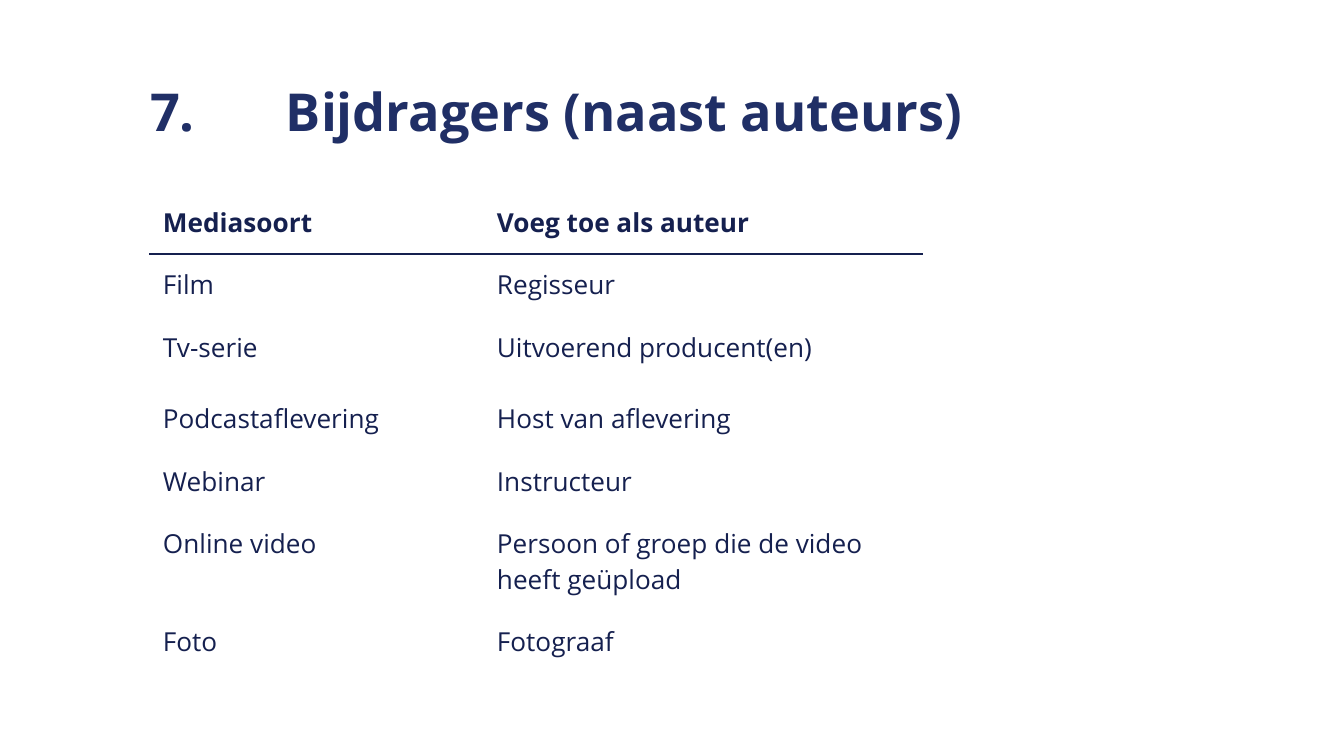
from dataclasses import dataclass

from lxml.etree import SubElement as Sub
from pptx import Presentation
from pptx.dml.color import RGBColor as Rgb
from pptx.enum.text import MSO_ANCHOR as Anchor
from pptx.oxml.ns import qn
from pptx.util import Emu, Pt

SCALE = 914400 / 134.4


@dataclass(frozen=True)
class Theme:
    """Hold the font, colours and type sizes."""
    font: str = "Open Sans"
    title: str = "202F66"
    ink: str = "15204F"
    big: int = 28
    body: int = 14
    rule: float = 1.5


THEME = Theme()
HEAD = ("Mediasoort", "Voeg toe als auteur")
ROWS = (
    ("Film", "Regisseur"),
    ("Tv-serie", "Uitvoerend producent(en)"),
    ("Podcastaflevering", "Host van aflevering"),
    ("Webinar", "Instructeur"),
    ("Online video", "Persoon of groep die de video heeft geüpload"),
    ("Foto", "Fotograaf"),
)
COLS = (334, 438)
HEIGHTS = (62, 63, 71, 63, 62, 98, 62)


def px(num):
    """Turn pixels into EMU."""
    return Emu(round(num * SCALE))


def pad(box):
    """Set the inner margins of a cell or text frame."""
    box.margin_left = box.margin_right = px(13)
    box.margin_top = box.margin_bottom = px(13)


def write(frame, text, size, color, bold):
    """Add one styled run to the first paragraph."""
    run = frame.paragraphs[0].add_run()
    run.text = text
    font = run.font
    font.name, font.size, font.bold = THEME.font, Pt(size), bold
    font.color.rgb = Rgb.from_string(color)


def add_title(slide, text):
    """Add the slide heading with a tab after its number."""
    frame = slide.shapes.add_textbox(*map(px, (137, 66, 1058, 85))).text_frame
    frame.word_wrap = True
    frame.vertical_anchor = Anchor.TOP
    pad(frame)
    props = frame.paragraphs[0]._p.get_or_add_pPr()
    tabs = Sub(props, qn("a:tabLst"))
    Sub(tabs, qn("a:tab"), pos=str(px(136)), algn="l")
    write(frame, text, THEME.big, THEME.title, True)


def add_rule(cell, side, shown):
    """Set one side of a cell to a solid border or to none."""
    props = cell._tc.get_or_add_tcPr()
    line = Sub(props, qn(f"a:{side}"), w=str(Pt(THEME.rule)))
    if shown:
        fill = Sub(line, qn("a:solidFill"))
        Sub(fill, qn("a:srgbClr"), val=THEME.ink)
    else:
        Sub(line, qn("a:noFill"))
    props.insert(0, line)


def add_grid(slide):
    """Add the table of media types and contributors."""
    data = (HEAD, *ROWS)
    table = slide.shapes.add_table(
        len(data), len(COLS), px(150), px(192), px(sum(COLS)), px(sum(HEIGHTS))
    ).table
    table.first_row = table.horz_banding = False
    for col, width in zip(table.columns, COLS):
        col.width = px(width)
    for row, height in zip(table.rows, HEIGHTS):
        row.height = px(height)
    for i, texts in enumerate(data):
        for j, text in enumerate(texts):
            cell = table.cell(i, j)
            pad(cell)
            cell.vertical_anchor = Anchor.TOP
            cell.fill.background()
            write(cell.text_frame, text, THEME.body, THEME.ink, i == 0)
            add_rule(cell, "lnB", i == 0)
            add_rule(cell, "lnT", i == 1)


def main():
    """Build and save the slide."""
    deck = Presentation()
    deck.slide_width, deck.slide_height = px(1344), px(756)
    slide = deck.slides.add_slide(deck.slide_layouts[6])
    add_title(slide, "7.\tBijdragers (naast auteurs)")
    add_grid(slide)
    deck.save("out.pptx")


if __name__ == "__main__":
    main()
